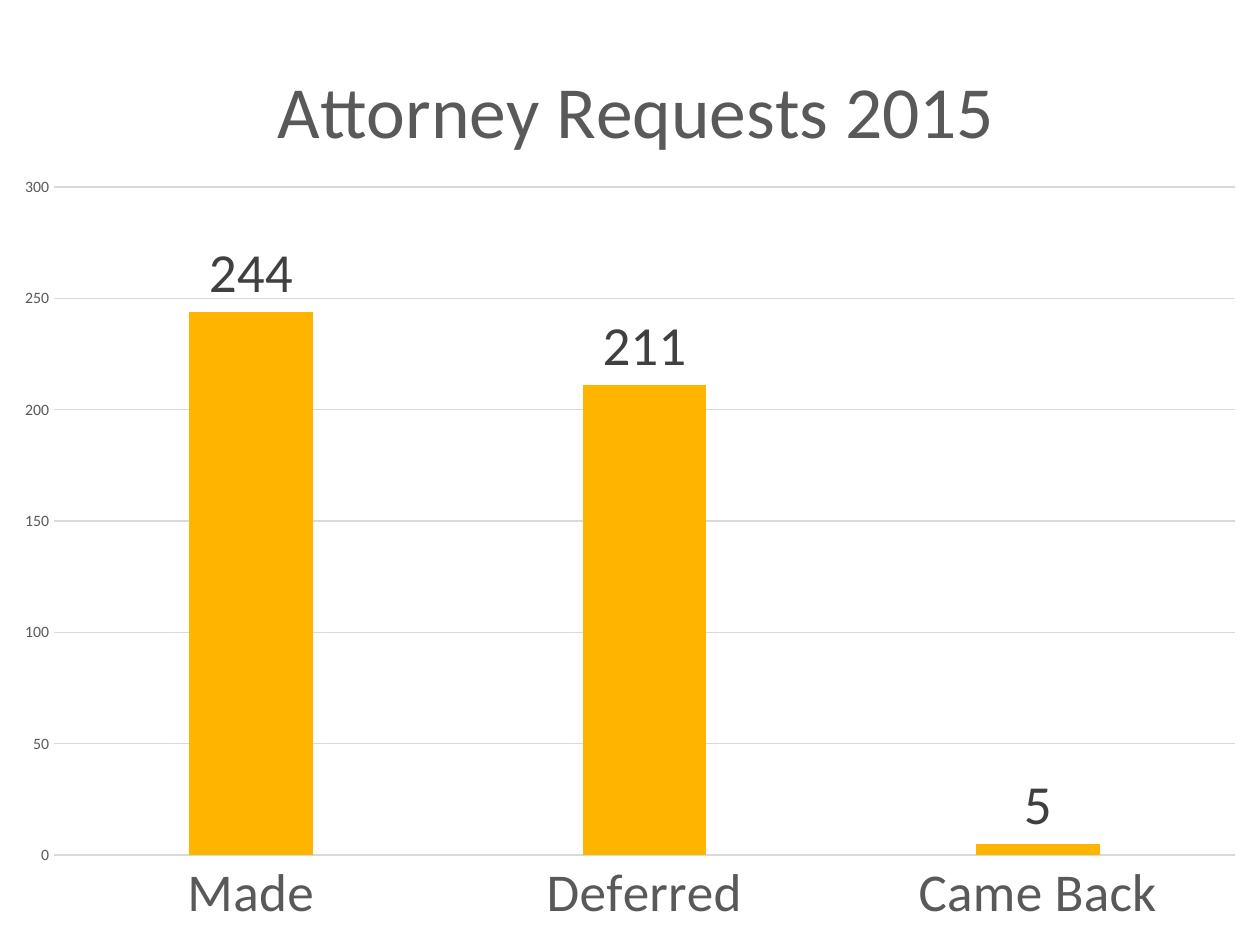
from lxml.etree import SubElement
from pptx import Presentation
from pptx.chart.data import CategoryChartData
from pptx.dml.color import RGBColor
from pptx.enum.chart import XL_CHART_TYPE as ChartType
from pptx.enum.chart import XL_LABEL_POSITION as LabelPos
from pptx.enum.chart import XL_TICK_MARK as Tick
from pptx.oxml.ns import qn
from pptx.util import Cm, Pt

FONT = "Calibri"
AMBER, GRID, GREY, DARK = "FFB400", "D9D9D9", "595959", "404040"
REQUESTS = {"Made": 244, "Deferred": 211, "Came Back": 5}


def rgb(value):
    return RGBColor.from_string(value)


def format_font(font, size, color):
    font.name = FONT
    font.size = Pt(size)
    font.bold = False
    font.color.rgb = rgb(color)


def add_text(tf, text, size, color):
    r = tf.paragraphs[0].add_run()
    r.text = text
    format_font(r.font, size, color)


def format_line(line, color, width=0.75):
    line.color.rgb = rgb(color)
    line.width = Pt(width)


def set_layout(parent, index, **values):
    """Place a chart part by fractions of the chart's size."""
    for old in parent.findall(qn("c:layout")):
        parent.remove(old)
    layout = SubElement(parent, qn("c:layout"))
    parent.insert(index, layout)
    manual = SubElement(layout, qn("c:manualLayout"))
    for tag, value in values.items():
        SubElement(manual, qn(f"c:{tag}")).set("val", str(value))


def add_title(chart, text):
    chart.has_title = True
    title = chart.chart_title
    add_text(title.text_frame, text, size=42, color=GREY)
    title.include_in_layout = False
    set_layout(title._element, 1, xMode="edge", yMode="edge", x=0.21, y=0.05)


def format_axes(chart):
    for axis, size in ((chart.category_axis, 30.4), (chart.value_axis, 9)):
        axis.major_tick_mark = axis.minor_tick_mark = Tick.NONE
        format_font(axis.tick_labels.font, size, GREY)
    format_line(chart.category_axis.format.line, GRID)
    values = chart.value_axis
    values.minimum_scale, values.maximum_scale, values.major_unit = 0, 300, 50
    values.format.line.fill.background()
    values.has_major_gridlines = True
    format_line(values.major_gridlines.format.line, GRID)


def format_columns(plot):
    plot.gap_width, plot.overlap = 219, -27
    plot.vary_by_categories = False
    series = plot.series[0]
    series.format.fill.solid()
    series.format.fill.fore_color.rgb = rgb(AMBER)
    labels = series.data_labels
    labels.show_value = True
    labels.position = LabelPos.OUTSIDE_END
    format_font(labels.font, 31.5, DARK)


def add_column_chart(slide, prs):
    data = CategoryChartData()
    data.categories = list(REQUESTS)
    data.add_series("Series 1", list(REQUESTS.values()))
    chart = slide.shapes.add_chart(ChartType.COLUMN_CLUSTERED, 0, 0,
                                   prs.slide_width, prs.slide_height, data).chart
    chart.has_legend = False
    format_font(chart.font, 10, "000000")
    add_title(chart, "Attorney Requests 2015")
    format_axes(chart)
    format_columns(chart.plots[0])
    plot_area = chart._chartSpace.find(f".//{qn('c:plotArea')}")
    set_layout(plot_area, 0, layoutTarget="inner", xMode="edge", yMode="edge",
               x=0.043, y=0.198, w=0.937, h=0.707)


def main():
    prs = Presentation()
    prs.slide_width, prs.slide_height = Cm(25.4), Cm(19.05)
    slide = prs.slides.add_slide(prs.slide_layouts[6])
    add_column_chart(slide, prs)
    prs.save("out.pptx")


if __name__ == "__main__":
    main()
